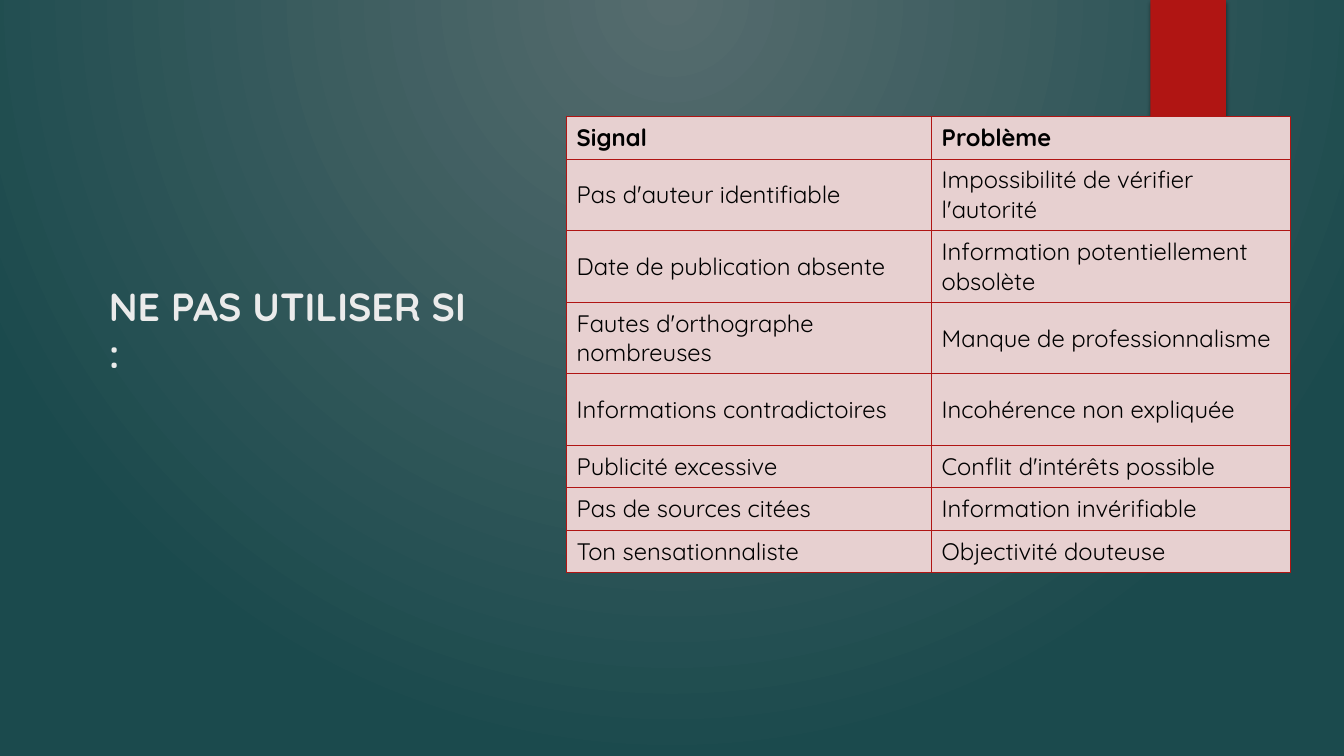
from lxml.etree import SubElement
from pptx import Presentation
from pptx.dml.color import RGBColor
from pptx.enum.shapes import MSO_SHAPE
from pptx.enum.text import MSO_ANCHOR, MSO_AUTO_SIZE, PP_ALIGN
from pptx.oxml import parse_xml
from pptx.oxml.ns import nsdecls, qn
from pptx.util import Inches, Pt

FONT = "Quicksand"
RED = "B01513"
CELL_FILL = "E7D0D0"
ROWS = [
    ("Signal", "Problème"),
    ("Pas d'auteur identifiable", "Impossibilité de vérifier l'autorité"),
    ("Date de publication absente", "Information potentiellement obsolète"),
    ("Fautes d'orthographe nombreuses", "Manque de professionnalisme"),
    ("Informations contradictoires", "Incohérence non expliquée"),
    ("Publicité excessive", "Conflit d'intérêts possible"),
    ("Pas de sources citées", "Information invérifiable"),
    ("Ton sensationnaliste", "Objectivité douteuse"),
]
COLUMN_WIDTHS = [3.62, 3.56]
LOW_ROW, TALL_ROW = 0.42, 0.71
TALL_ROWS = range(1, 5)


def color(value):
    return RGBColor.from_string(value)


def box_of(left, top, width, height):
    return [Inches(length) for length in (left, top, width, height)]


def apply_format(target, values):
    for name, value in values.items():
        setattr(target, name, value)


def format_font(paragraph, size, text_color, bold):
    apply_format(paragraph.font, {"name": FONT, "size": Pt(size), "bold": bold})
    paragraph.font.color.rgb = color(text_color)


def fill_radial(owner, fill, stops, focus):
    """Stops are (position %, colour, opacity %); focus is the inner box in %."""
    fill.gradient()
    stop_xml = "".join(
        f'<a:gs pos="{position * 1000}"><a:srgbClr val="{value}">'
        f'<a:alpha val="{opacity * 1000}"/></a:srgbClr></a:gs>'
        for position, value, opacity in stops)
    sides = " ".join(f'{side}="{share * 1000}"' for side, share in zip("ltrb", focus))
    gradient = owner.element.find(".//" + qn("a:gradFill"))
    gradient.getparent().replace(gradient, parse_xml(
        f'<a:gradFill rotWithShape="1" {nsdecls("a")}><a:gsLst>{stop_xml}</a:gsLst>'
        f'<a:path path="circle"><a:fillToRect {sides}/></a:path></a:gradFill>'))


def add_plain_shape(slide, kind, box):
    shape = slide.shapes.add_shape(kind, *box_of(*box))
    shape.shadow.inherit = False
    shape.line.fill.background()
    return shape


def add_backdrop(slide):
    fill_radial(slide, slide.background.fill,
                [(0, "566C6E", 100), (100, "1B4A4D", 100)], (43, 0, 43, 100))
    glow = add_plain_shape(slide, MSO_SHAPE.OVAL, (9.41, 1.83, 3.08, 3.08))
    fill_radial(glow, glow.fill,
                [(0, "50B9C1", 7), (36, "50B9C1", 6), (69, "50B9C1", 0)], (50,) * 4)
    ribbon = add_plain_shape(slide, MSO_SHAPE.RECTANGLE, (11.41, 0, 0.75, 1.25))
    ribbon.fill.solid()
    ribbon.fill.fore_color.rgb = color(RED)
    effects = ribbon.element.spPr.find(qn("a:effectLst"))
    effects.append(parse_xml(
        f'<a:outerShdw {nsdecls("a")} blurRad="{Pt(3)}" dist="{Pt(2)}" dir="5400000" '
        'rotWithShape="0"><a:srgbClr val="000000"><a:alpha val="45000"/></a:srgbClr>'
        '</a:outerShdw>'))


def add_title(slide, box):
    title = slide.shapes.title
    apply_format(title, dict(zip(("left", "top", "width", "height"), box_of(*box))))
    frame = title.text_frame
    frame.text = "NE PAS UTILISER SI :"
    apply_format(frame, {"word_wrap": True, "auto_size": MSO_AUTO_SIZE.NONE,
                         "vertical_anchor": MSO_ANCHOR.MIDDLE})
    paragraph = frame.paragraphs[0]
    paragraph.alignment = PP_ALIGN.LEFT
    format_font(paragraph, 28, "EBEBEB", True)
    slide.shapes.element.append(title.element)


def format_cell(cell, text, bold):
    cell.text = text
    apply_format(cell, {"vertical_anchor": MSO_ANCHOR.MIDDLE,
                        "margin_left": Inches(0.1), "margin_right": Inches(0.1),
                        "margin_top": Inches(0.05), "margin_bottom": Inches(0.05)})
    format_font(cell.text_frame.paragraphs[0], 17, "000000", bold)
    properties = cell._tc.get_or_add_tcPr()
    for side in ("a:lnL", "a:lnR", "a:lnT", "a:lnB"):
        border = SubElement(properties, qn(side), w=str(Pt(0.75)))
        border_fill = SubElement(border, qn("a:solidFill"))
        SubElement(border_fill, qn("a:srgbClr"), val=RED)
    cell.fill.solid()
    cell.fill.fore_color.rgb = color(CELL_FILL)


def add_signal_table(slide, left, top):
    heights = [TALL_ROW if index in TALL_ROWS else LOW_ROW for index in range(len(ROWS))]
    box = box_of(left, top, sum(COLUMN_WIDTHS), sum(heights))
    table = slide.shapes.add_table(len(ROWS), len(COLUMN_WIDTHS), *box).table
    for column, width in zip(table.columns, COLUMN_WIDTHS):
        column.width = Inches(width)
    for index, (row, height, texts) in enumerate(zip(table.rows, heights, ROWS)):
        row.height = Inches(height)
        for cell, text in zip(row.cells, texts):
            format_cell(cell, text, bold=index == 0)


def main():
    presentation = Presentation()
    apply_format(presentation, {"slide_width": Inches(13.33), "slide_height": Inches(7.5)})
    slide = presentation.slides.add_slide(presentation.slide_layouts.get_by_name("Title Only"))
    add_backdrop(slide)
    add_title(slide, (0.98, 2.65, 3.83, 1.23))
    add_signal_table(slide, 5.62, 1.16)
    presentation.save("out.pptx")


if __name__ == "__main__":
    main()
